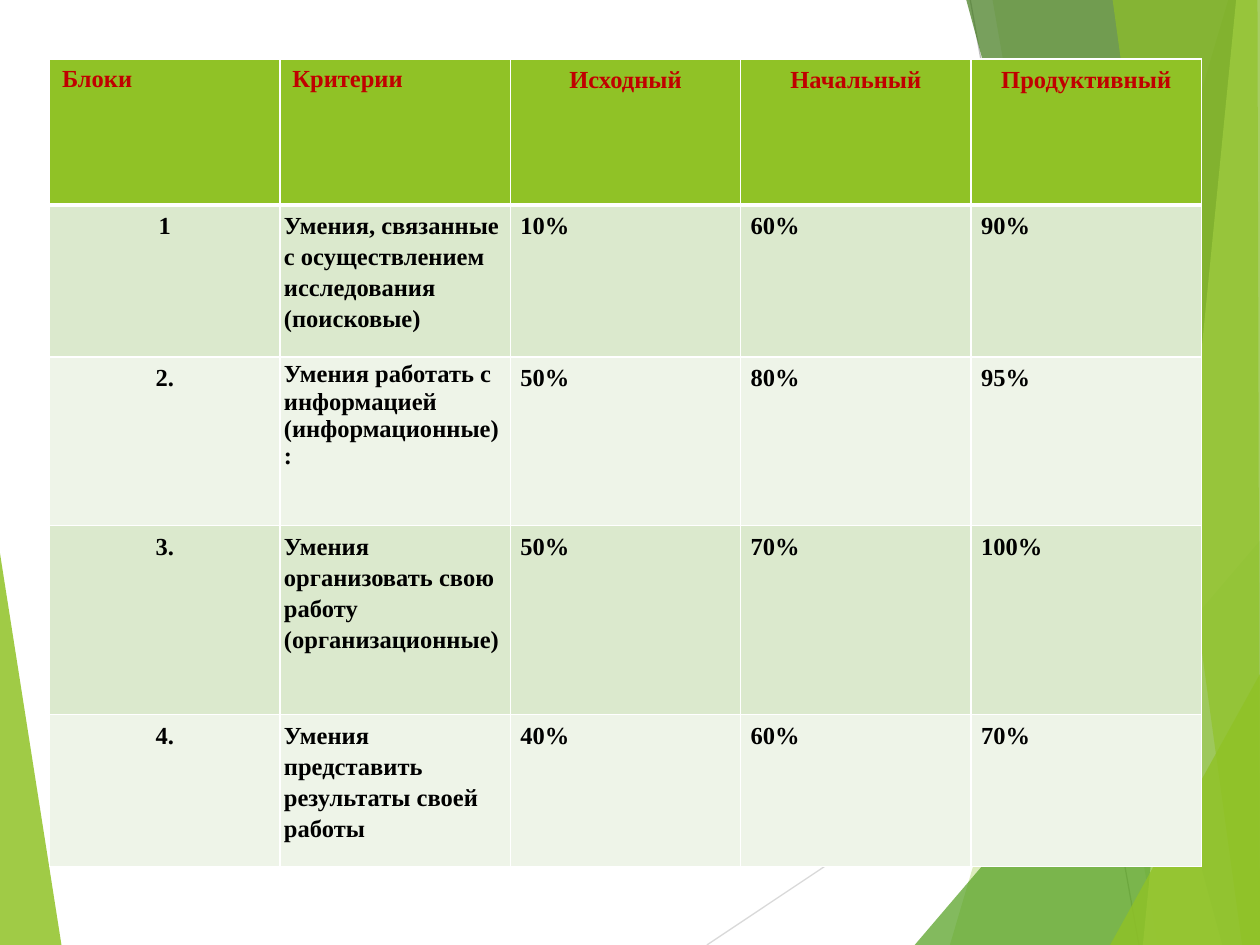
import lxml.etree
import pptx
import pptx.dml.color
import pptx.enum.text
import pptx.oxml.ns
import pptx.util

Cm = pptx.util.Cm
Pt = pptx.util.Pt
qn = pptx.oxml.ns.qn
CENTER = pptx.enum.text.PP_ALIGN.CENTER
LEFT = pptx.enum.text.PP_ALIGN.LEFT

WIDTH, HEIGHT = 25.4, 19.05
GREEN, WHITE = "90C226", "FFFFFF"
BANDS = ("DBE9CD", "EEF4E8")
ROW_HEIGHTS = (2.94, 3.07, 3.39, 3.81, 3.07)

LEFT_SHARD = ([(0, 11.15), (1.24, HEIGHT), (0, HEIGHT)], GREEN, 85)
RAYS = [
    ((14.25, HEIGHT), (25.4, 11.61), "D9D9D9"),
    ((19.56, 0), (22.96, HEIGHT), "BFBFBF"),
]
RIGHT_SHARDS = [
    ([(24.76, 0), (19.15, HEIGHT), (WIDTH, HEIGHT), (WIDTH, 0)], GREEN, 30),
    ([(20.01, 0), (23.34, HEIGHT), (WIDTH, HEIGHT), (WIDTH, 0)], GREEN, 20),
    ([(18.44, HEIGHT), (WIDTH, 10.9), (WIDTH, HEIGHT)], "54A021", 72),
    ([(19.48, 0), (24.64, HEIGHT), (WIDTH, HEIGHT), (WIDTH, 0)], "3F7819", 70),
    ([(24.92, 0), (23.04, HEIGHT), (WIDTH, HEIGHT), (WIDTH, 0)], "C0E474", 70),
    ([(22.43, 0), (25.04, HEIGHT), (WIDTH, HEIGHT), (25.35, 0)], GREEN, 65),
    ([(22.38, HEIGHT), (WIDTH, 13.59), (WIDTH, HEIGHT)], GREEN, 80),
]
HEADERS = ("Блоки", "Критерии", "Исходный", "Начальный", "Продуктивный")
RESULTS = [
    ("1", "Умения, связанные с осуществлением исследования (поисковые)", "10%", "60%", "90%"),
    ("2.", "Умения работать с информацией (информационные):", "50%", "80%", "95%"),
    ("3.", "Умения организовать свою работу (организационные)", "50%", "70%", "100%"),
    ("4.", "Умения представить результаты своей работы", "40%", "60%", "70%"),
]


def color(value):
    """Return the colour for a hex string."""
    return pptx.dml.color.RGBColor.from_string(value)


def add_shard(page, box, points, fill, opacity):
    """Draw a translucent polygon with points relative to the box."""
    corners = [(Cm(x), Cm(y)) for x, y in points]
    builder = page.shapes.build_freeform(*corners[0], scale=1.0)
    builder.add_line_segments(corners[1:], close=True)
    shape = builder.convert_to_shape(Cm(box[0]), Cm(box[1]))
    shape.shadow.inherit = False
    shape.line.fill.background()
    shape.fill.solid()
    shape.fill.fore_color.rgb = color(fill)
    tint = shape.element.spPr.find(".//" + qn("a:srgbClr"))
    lxml.etree.SubElement(tint, qn("a:alpha"), val=str(opacity * 1000))


def add_ray(page, box, start, end, stroke):
    """Draw a thin line with ends relative to the box."""
    ends = [Cm(box[i] + point[i]) for point in (start, end) for i in (0, 1)]
    line = page.shapes.add_connector(pptx.enum.shapes.MSO_CONNECTOR.STRAIGHT, *ends)
    line.line.color.rgb = color(stroke)
    line.line.width = Pt(0.75)
    lxml.etree.SubElement(line.element.spPr, qn("a:effectLst"))


def add_backdrop(page, box):
    """Draw the green shards and the two rays."""
    add_shard(page, box, *LEFT_SHARD)
    for ray in RAYS:
        add_ray(page, box, *ray)
    for shard in RIGHT_SHARDS:
        add_shard(page, box, *shard)


def add_borders(cell, top, bottom):
    """Give a cell white borders with the given top and bottom widths."""
    properties = cell._tc.get_or_add_tcPr()
    for side, width in (("L", 1), ("R", 1), ("T", top), ("B", bottom)):
        border = lxml.etree.SubElement(properties, qn("a:ln" + side), w=str(Pt(width)))
        fill = lxml.etree.SubElement(border, qn("a:solidFill"))
        lxml.etree.SubElement(fill, qn("a:srgbClr"), val=WHITE)


def fill_cell(cell, text, fill, ink, align=LEFT, spacing=1.15, indent=0.08, top=0.08):
    """Write and format one cell."""
    cell.fill.solid()
    cell.fill.fore_color.rgb = color(fill)
    cell.margin_left, cell.margin_right = Cm(indent), Cm(0.08)
    cell.margin_top, cell.margin_bottom = Cm(top), Cm(0.08)
    cell.text = text
    para = cell.text_frame.paragraphs[0]
    para.alignment = align
    para.line_spacing = spacing
    para.font.name = "Times New Roman"
    para.font.size = Pt(14)
    para.font.bold = True
    para.font.color.rgb = color(ink)


def add_results(page, box):
    """Build the table of skill levels inside the box."""
    frame = page.shapes.add_table(len(RESULTS) + 1, len(HEADERS), *map(Cm, box))
    table = frame.table
    table.first_row = table.horz_banding = False
    for column in table.columns:
        column.width = Cm(box[2] / len(HEADERS))
    for row, height in zip(table.rows, ROW_HEIGHTS):
        row.height = Cm(height)
    for i, texts in enumerate([HEADERS, *RESULTS]):
        for j, text in enumerate(texts):
            cell = table.cell(i, j)
            add_borders(cell, 3 if i == 1 else 1, 3 if i == 0 else 1)
            if i == 0 and j < 2:
                fill_cell(cell, text, GREEN, "C00000", spacing=1.0, indent=0.25, top=0.13)
            elif i == 0:
                fill_cell(cell, text, GREEN, "C00000", CENTER)
            else:
                fill_cell(
                    cell, text, BANDS[(i - 1) % 2], "000000",
                    align=CENTER if j == 0 else LEFT,
                    spacing=1.0 if (i, j) == (2, 1) else 1.15,
                    indent=0.2 if j > 1 else 0.08,
                )


def main():
    """Build and save the deck."""
    deck = pptx.Presentation()
    deck.slide_width, deck.slide_height = Cm(WIDTH), Cm(HEIGHT)
    page = deck.slides.add_slide(deck.slide_layouts[6])
    add_backdrop(page, (0, 0, WIDTH, HEIGHT))
    add_results(page, (1, 1.19, 23.22, sum(ROW_HEIGHTS)))
    deck.save("out.pptx")


if __name__ == "__main__":
    main()
